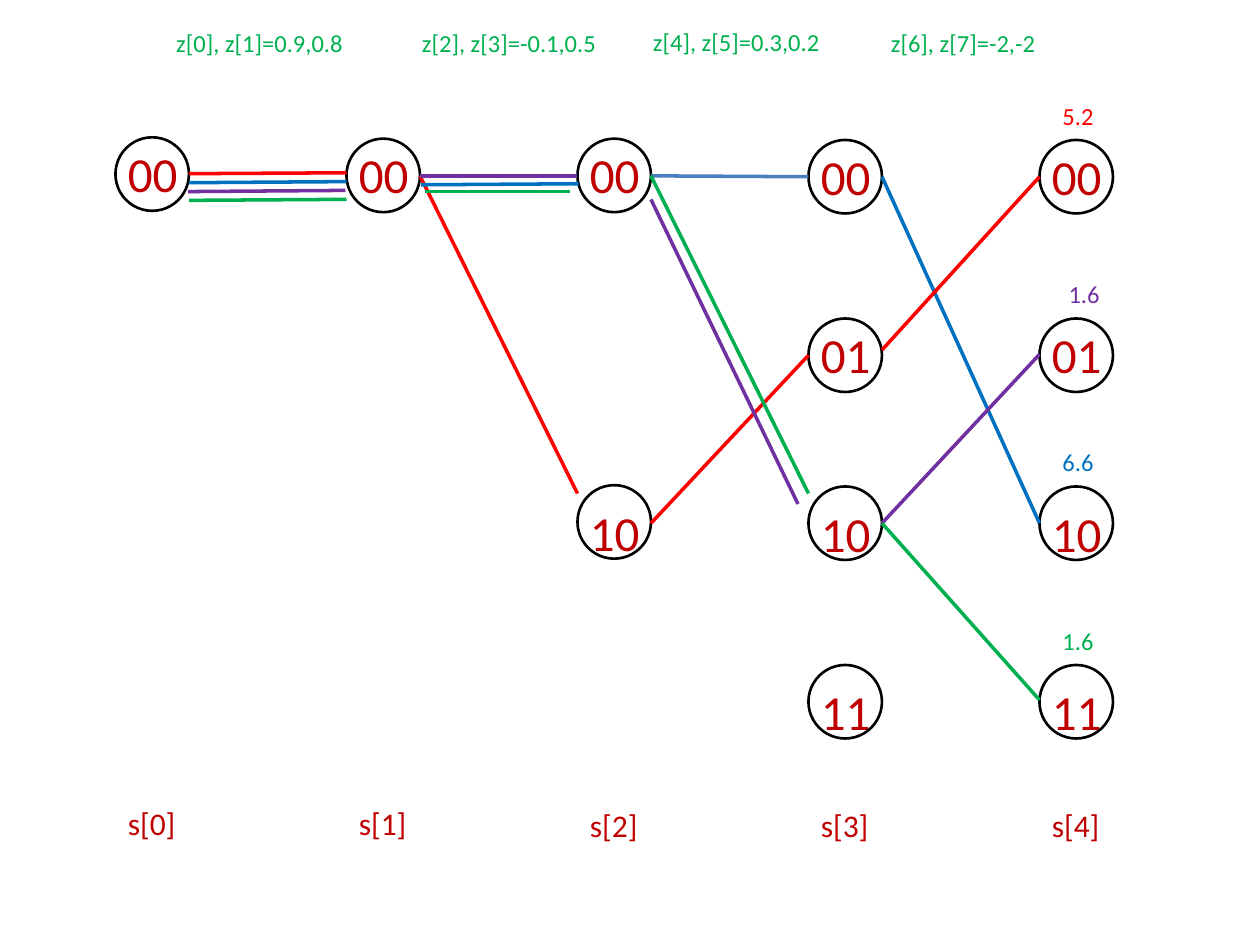
from lxml import etree
from pptx import Presentation
from pptx.dml.color import RGBColor
from pptx.enum.shapes import MSO_CONNECTOR, MSO_SHAPE
from pptx.enum.text import MSO_AUTO_SIZE
from pptx.oxml.ns import qn
from pptx.util import Pt

ELLIPSE = MSO_SHAPE.OVAL
STRAIGHT = MSO_CONNECTOR.STRAIGHT
GROW = MSO_AUTO_SIZE.SHAPE_TO_FIT_TEXT

BLACK = RGBColor(0x00, 0x00, 0x00)
DARK_RED = RGBColor(0xC0, 0x00, 0x00)
RED = RGBColor(0xFF, 0x00, 0x00)
GREEN = RGBColor(0x00, 0xB0, 0x50)
BLUE = RGBColor(0x00, 0x70, 0xC0)
STEEL = RGBColor(0x4B, 0x7E, 0xBC)
PURPLE = RGBColor(0x70, 0x30, 0xA0)

FIRST_LEFT = 66
COLUMN_STEP = 132
CIRCLE = 42
ROW_OFFSETS = {"00": 0, "01": 102, "10": 198, "11": 300}
LABEL_SIZE = 28
LABEL_LINE = 34.18  # line height of a state label
LABEL_LINES = {"00": 0, "01": 3, "10": 6, "11": 9}

# top of the first circle, states, top of the stage name
STAGES = [
    (78.5, ["00"], 456),
    (79.25, ["00"], 456),
    (79.25, ["00", "10"], 457),
    (80, ["00", "01", "10", "11"], 457),
    (80, ["00", "01", "10", "11"], 457),
]

# per step: colour, start y, end y, shift of start x, shift of end x
BRANCHES = [
    [(RED, 99.25, 98.75, 0, 0), (BLUE, 104.4, 103.8, 0, 0),
     (PURPLE, 109.5, 108.8, -0.6, -0.6), (GREEN, 114.5, 113.9, 0, 0)],
    [(RED, 100.5, 282, 0, 0), (PURPLE, 100.5, 100.5, 0, 0),
     (BLUE, 105.6, 105, 0.6, 0.6), (GREEN, 109.5, 109.5, 2.6, -4)],
    [(RED, 299, 203, 0, 0), (STEEL, 100.5, 101, 0, 0),
     (PURPLE, 114, 288, 0, -6), (GREEN, 100.5, 282, 0, 0)],
    [(BLUE, 101, 299, 0, 0), (RED, 200, 101, 0, 0),
     (PURPLE, 299, 202.5, 0, 0), (GREEN, 299, 400, 0, 0)],
]

# left, top, width, text
RECEIVED = [
    (93.6, 12.5, 110, "z[0], z[1]=0.9,0.8"),
    (234, 12.5, 114.5, "z[2], z[3]=-0.1,0.5"),
    (366, 12, 110, "z[4], z[5]=0.3,0.2"),
    (502, 12.5, 97, "z[6], z[7]=-2,-2"),
]

# left, top, text, colour
METRICS = [
    (600, 54, "5.2", RED),
    (603.5, 156, "1.6", PURPLE),
    (600, 252, "6.6", BLUE),
    (600, 354, "1.6", GREEN),
]


def column_left(index):
    return FIRST_LEFT + index * COLUMN_STEP


def add_text(slide, box, lines, size, color):
    """Add a text box; lines holds (text, space before) pairs."""
    frame = slide.shapes.add_textbox(*map(Pt, box)).text_frame
    frame.word_wrap = False
    frame.auto_size = GROW
    for index, (text, space) in enumerate(lines):
        paragraph = frame.add_paragraph() if index else frame.paragraphs[0]
        paragraph.text = text
        paragraph.space_before = Pt(space)
        paragraph.font.name = "Calibri"
        paragraph.font.size = Pt(size)
        paragraph.font.color.rgb = color


def add_circle(slide, left, top):
    circle = slide.shapes.add_shape(ELLIPSE, Pt(left), Pt(top), Pt(CIRCLE), Pt(CIRCLE))
    circle.shadow.inherit = False
    circle.fill.background()
    circle.line.color.rgb = BLACK
    circle.line.width = Pt(1.5)


def add_stage(slide, left, top, states, name, name_top):
    lines = []
    used = 0
    for state in states:
        lines.append((state, (LABEL_LINES[state] - used) * LABEL_LINE))
        used = LABEL_LINES[state] + 1
    height = used * LABEL_LINE + 7.2
    add_text(slide, (left, top, 43, height), lines, LABEL_SIZE, DARK_RED)
    for state in states:
        add_circle(slide, left, top + ROW_OFFSETS[state])
    add_text(slide, (left, name_top, CIRCLE, 29), [(name, 0)], 18, DARK_RED)


def add_branches(slide, left, right, branches):
    for color, start_y, end_y, start_shift, end_shift in branches:
        line = slide.shapes.add_connector(
            STRAIGHT, Pt(left + start_shift), Pt(start_y),
            Pt(right + end_shift), Pt(end_y))
        line.line.color.rgb = color
        line.line.width = Pt(2)
        etree.SubElement(line._element.spPr, qn("a:effectLst"))


def build_trellis(slide):
    for index, (top, states, name_top) in enumerate(STAGES):
        add_stage(slide, column_left(index), top, states, f"s[{index}]", name_top)
    for index, branches in enumerate(BRANCHES):
        add_branches(slide, column_left(index) + CIRCLE, column_left(index + 1), branches)
    for left, top, width, text in RECEIVED:
        add_text(slide, (left, top, width, 24.25), [(text, 0)], 14, GREEN)
    for left, top, text, color in METRICS:
        add_text(slide, (left, top, 32, 24.25), [(text, 0)], 14, color)


def main():
    presentation = Presentation()
    presentation.slide_width = Pt(720)
    presentation.slide_height = Pt(540)
    build_trellis(presentation.slides.add_slide(presentation.slide_layouts[6]))
    presentation.save("out.pptx")


if __name__ == "__main__":
    main()
